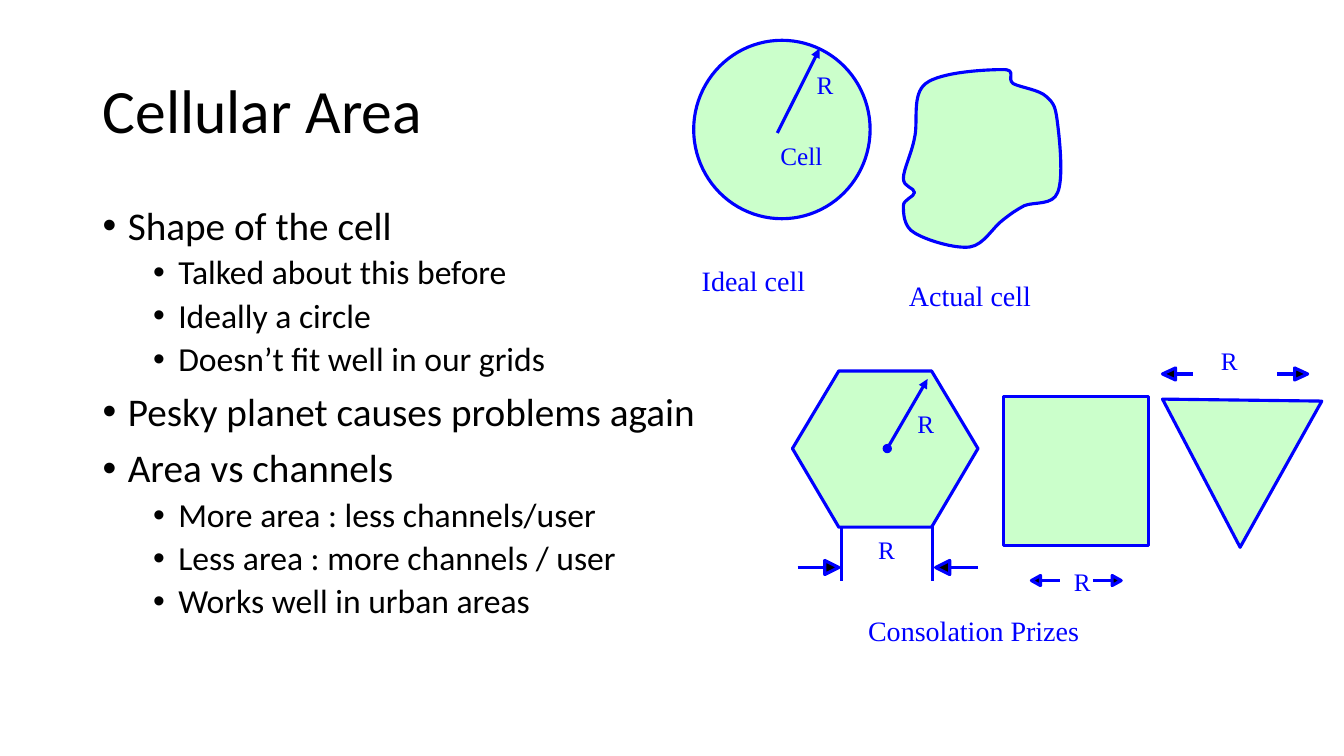
"""Build the Cellular Area slide: bullet text beside diagrams of cell shapes."""
from dataclasses import dataclass
from typing import NamedTuple

from lxml.etree import SubElement
from pptx import Presentation
from pptx.dml.color import RGBColor
from pptx.enum.shapes import MSO_CONNECTOR, MSO_SHAPE
from pptx.enum.text import MSO_ANCHOR, MSO_AUTO_SIZE
from pptx.oxml.ns import qn
from pptx.util import Pt

EMU_PER_PX = 9144


@dataclass(frozen=True)
class Theme:
    ink: RGBColor = RGBColor(0x00, 0x00, 0x00)
    blue: RGBColor = RGBColor(0x00, 0x00, 0xFF)
    green: RGBColor = RGBColor(0x99, 0xFF, 0x99)
    green_alpha: int = 50
    outline: float = 2.25
    text_font: str = "Calibri"
    label_font: str = "Times New Roman"
    title_size: int = 44
    bullet_sizes: tuple[int, int] = (28, 24)
    symbol_size: int = 18
    caption_size: int = 20


THEME = Theme()


class Point(NamedTuple):
    x: int
    y: int


class Frame(NamedTuple):
    left: int
    top: int
    width: int
    height: int


class Bullet(NamedTuple):
    text: str
    level: int = 0


class Label(NamedTuple):
    text: str
    frame: Frame
    size: int = THEME.symbol_size
    wrap: bool = False


class Rule(NamedTuple):
    start: Point
    end: Point
    head: str = ""
    tail: str = ""


class DimensionArrow(NamedTuple):
    start: Point
    tip: Point
    length: int
    half_width: int


BULLETS = (
    Bullet("Shape of the cell"),
    Bullet("Talked about this before", 1),
    Bullet("Ideally a circle", 1),
    Bullet("Doesn’t fit well in our grids", 1),
    Bullet("Pesky planet causes problems again"),
    Bullet("Area vs channels"),
    Bullet("More area : less channels/user", 1),
    Bullet("Less area : more channels / user", 1),
    Bullet("Works well in urban areas", 1),
)
PRESETS = (
    (MSO_SHAPE.OVAL, Frame(688, 40, 175, 177)),
    (MSO_SHAPE.RECTANGLE, Frame(995, 393, 144, 148)),
)
HEXAGON = (Point(832, 368), Point(786, 445), Point(832, 523),
           Point(924, 523), Point(970, 445), Point(924, 368))
TRIANGLE = (Point(1230, 543), Point(1311, 398), Point(1153, 396))
ACTUAL_CELL = tuple(Point(x, y) for x, y in (
    (995, 69),
    (980, 69), (933, 71), (918, 83), (904, 94), (911, 121), (907, 137),
    (904, 153), (896, 168), (896, 177), (896, 186), (907, 186), (907, 191),
    (907, 195), (896, 198), (896, 204), (896, 211), (896, 225), (907, 231),
    (918, 238), (947, 247), (962, 245), (976, 243), (985, 225), (995, 218),
    (1004, 211), (1007, 209), (1016, 204), (1026, 200), (1044, 204), (1049, 191),
    (1055, 177), (1051, 139), (1049, 123), (1047, 107), (1046, 103), (1038, 96),
    (1031, 89), (1013, 87), (1005, 83), (998, 78), (1009, 69), (995, 69),
))
RULES = (
    Rule(Point(771, 132), Point(813, 48), tail="triangle"),
    Rule(Point(880, 445), Point(920, 376), head="oval", tail="triangle"),
    Rule(Point(835, 522), Point(835, 576)),
    Rule(Point(925, 522), Point(925, 576)),
)
DIMENSION_ARROWS = (
    DimensionArrow(Point(1051, 576), Point(1023, 576), 9, 5),
    DimensionArrow(Point(1084, 576), Point(1112, 576), 9, 5),
    DimensionArrow(Point(1183, 371), Point(1153, 371), 13, 6),
    DimensionArrow(Point(1267, 371), Point(1297, 371), 13, 6),
    DimensionArrow(Point(791, 563), Point(832, 563), 14, 7),
    DimensionArrow(Point(970, 563), Point(928, 563), 14, 7),
)
LABELS = (
    Label("Cell", Frame(774, 139, 43, 30)),
    *(Label("R", Frame(left, top, 17, 30)) for left, top in
      ((810, 69), (1065, 562), (1211, 343), (910, 405), (871, 530))),
    Label("Ideal cell", Frame(696, 261, 167, 33), THEME.caption_size, True),
    Label(" Actual cell", Frame(896, 276, 175, 33), THEME.caption_size, True),
    Label("Consolation Prizes", Frame(861, 609, 360, 33), THEME.caption_size, True),
)


def px(length: int) -> int:
    return length * EMU_PER_PX


def style_shape(shape, fill: RGBColor, alpha: int = 100) -> None:
    shape.shadow.inherit = False
    shape.fill.solid()
    shape.fill.fore_color.rgb = fill
    if alpha < 100:
        color = shape.fill._xPr.find(qn("a:solidFill"))[0]
        SubElement(color, qn("a:alpha"), val=str(alpha * 1000))
    shape.line.color.rgb = THEME.blue
    shape.line.width = Pt(THEME.outline)


def add_outline(page, points: tuple[Point, ...], fill: RGBColor, alpha: int = 100):
    corners = [(px(point.x), px(point.y)) for point in points]
    builder = page.shapes.build_freeform(*corners[0], scale=1.0)
    builder.add_line_segments(corners[1:], close=True)
    shape = builder.convert_to_shape()
    style_shape(shape, fill, alpha)
    return shape


def curve_outline(shape) -> None:
    segments = list(shape._element.iter(qn("a:lnTo")))
    for first, second, third in zip(*[iter(segments)] * 3):
        first.tag = qn("a:cubicBezTo")
        for segment in (second, third):
            first.append(segment[0])
            segment.getparent().remove(segment)


def add_rule(page, rule: Rule) -> None:
    line = page.shapes.add_connector(
        MSO_CONNECTOR.STRAIGHT, *map(px, rule.start), *map(px, rule.end))
    line.line.color.rgb = THEME.blue
    line.line.width = Pt(THEME.outline)
    for tag, kind in (("a:headEnd", rule.head), ("a:tailEnd", rule.tail)):
        if kind:
            SubElement(line.line._get_or_add_ln(), qn(tag), type=kind)
    SubElement(line._element.spPr, qn("a:effectLst"))


def add_dimension_arrow(page, arrow: DimensionArrow) -> None:
    direction = 1 if arrow.tip.x > arrow.start.x else -1
    base = Point(arrow.tip.x - direction * arrow.length, arrow.tip.y)
    add_rule(page, Rule(arrow.start, base))
    add_outline(page, (Point(base.x, base.y - arrow.half_width), arrow.tip,
                       Point(base.x, base.y + arrow.half_width)), THEME.ink)


def add_text_frame(page, frame: Frame, *, wrap: bool = True, inset: bool = True):
    box = page.shapes.add_textbox(*map(px, frame)).text_frame
    box.word_wrap = wrap
    if not inset:
        box.margin_left = box.margin_top = box.margin_right = box.margin_bottom = 0
        box.auto_size = MSO_AUTO_SIZE.SHAPE_TO_FIT_TEXT
    return box


def write(para, text: str, *, size: int, font: str = THEME.text_font,
          color: RGBColor = THEME.ink) -> None:
    span = para.add_run()
    span.text = text
    span.font.name, span.font.size = font, Pt(size)
    span.font.color.rgb = color


def add_bullets(page, frame: Frame, bullets: tuple[Bullet, ...]) -> None:
    box = add_text_frame(page, frame)
    for index, bullet in enumerate(bullets):
        para = box.paragraphs[0] if index == 0 else box.add_paragraph()
        para.level, para.line_spacing = bullet.level, 0.9
        para.space_before = Pt((10, 5)[bullet.level])
        properties = para._p.get_or_add_pPr()
        properties.set("marL", str(px(25 + 50 * bullet.level)))
        properties.set("indent", str(px(-25)))
        SubElement(properties, qn("a:buFont"), typeface="Arial")
        SubElement(properties, qn("a:buChar"), char="•")
        write(para, bullet.text, size=THEME.bullet_sizes[bullet.level])


def main() -> None:
    deck = Presentation()
    deck.slide_width, deck.slide_height = px(1333), px(750)
    page = deck.slides.add_slide(deck.slide_layouts[6])
    title = add_text_frame(page, Frame(92, 40, 1150, 145))
    title.vertical_anchor = MSO_ANCHOR.MIDDLE
    title.paragraphs[0].line_spacing = 0.9
    write(title.paragraphs[0], "Cellular Area", size=THEME.title_size)
    add_bullets(page, Frame(92, 200, 1150, 476), BULLETS)
    for preset, frame in PRESETS:
        style_shape(page.shapes.add_shape(preset, *map(px, frame)),
                    THEME.green, THEME.green_alpha)
    curve_outline(add_outline(page, ACTUAL_CELL, THEME.green, THEME.green_alpha))
    for points in (HEXAGON, TRIANGLE):
        add_outline(page, points, THEME.green, THEME.green_alpha)
    for rule in RULES:
        add_rule(page, rule)
    for arrow in DIMENSION_ARROWS:
        add_dimension_arrow(page, arrow)
    for label in LABELS:
        box = add_text_frame(page, label.frame, wrap=label.wrap, inset=False)
        write(box.paragraphs[0], label.text, size=label.size,
              font=THEME.label_font, color=THEME.blue)
    deck.save("out.pptx")


if __name__ == "__main__":
    main()
